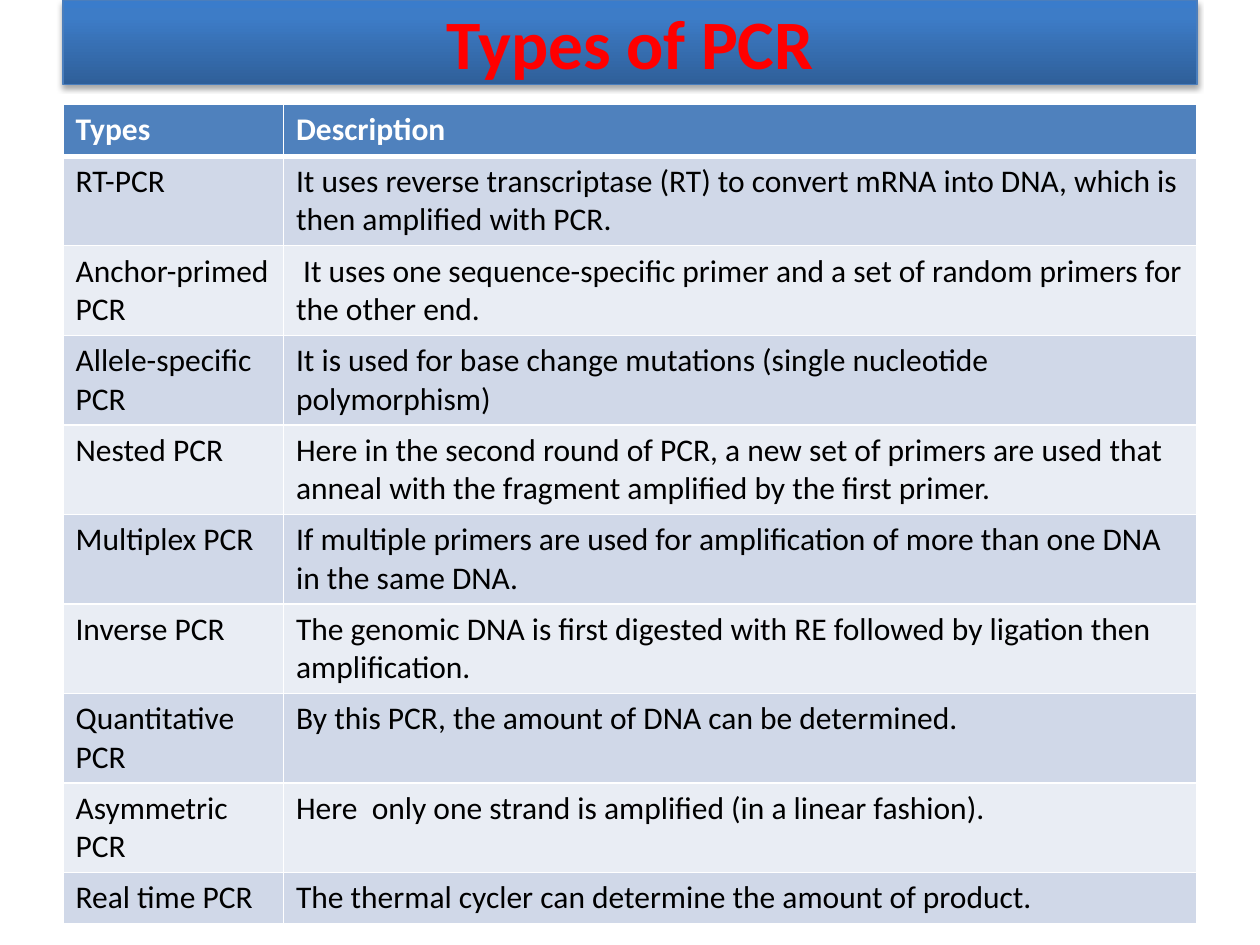
import copy

import lxml.etree
import pptx
import pptx.dml.color
import pptx.enum.text
import pptx.oxml
import pptx.oxml.ns
import pptx.util

COLORS = {
    "title": "FF0000", "title_line": "4B7EBC", "shadow": "000000",
    "header": "4F81BD", "header_text": "FFFFFF", "text": "000000",
    "odd_row": "D0D8E8", "even_row": "E9EDF4", "border": "FFFFFF",
}
TITLE_GRADIENT = [(0, "2F5F99"), (0.8, "3D7CC7"), (1, "3A7CCB")]
FONT = "Calibri"
SLIDE_WIDTH, SLIDE_HEIGHT = 10, 7.5
MARGIN = 0.05 * SLIDE_WIDTH
CONTENT_WIDTH = SLIDE_WIDTH - 2 * MARGIN
TITLE_BOX = (MARGIN, 0, CONTENT_WIDTH, 0.67)
TABLE_BOX = (MARGIN, 0.83, CONTENT_WIDTH, 4.1)
COLUMN_WIDTHS = (1.75, 7.25)

ROWS = [
    ("Types", "Description"),
    ("RT-PCR", "It uses reverse transcriptase (RT) to convert mRNA into DNA, "
     "which is then amplified with PCR."),
    ("Anchor-primed PCR", " It uses one sequence-specific primer and a set of "
     "random primers for the other end."),
    ("Allele-specific PCR", "It is used for base change mutations (single "
     "nucleotide polymorphism)"),
    ("Nested PCR", "Here in the second round of PCR, a new set of primers are "
     "used that anneal with the fragment amplified by the first primer."),
    ("Multiplex PCR", "If multiple primers are used for amplification of more "
     "than one DNA in the same DNA."),
    ("Inverse PCR", "The genomic DNA is first digested with RE followed by "
     "ligation then amplification."),
    ("Quantitative PCR", "By this PCR, the amount of DNA can be determined."),
    ("Asymmetric PCR", "Here  only one strand is amplified (in a linear fashion)."),
    ("Real time PCR", "The thermal cycler can determine the amount of product."),
]


def rgb(name):
    return pptx.dml.color.RGBColor.from_string(COLORS[name])


def inches(box):
    return [pptx.util.Inches(length) for length in box]


def format_text(paragraph, size, color, bold):
    font = paragraph.runs[0].font
    values = {"name": FONT, "size": pptx.util.Pt(size), "bold": bold}
    for name, value in values.items():
        setattr(font, name, value)
    font.color.rgb = rgb(color)


def fill_gradient(shape, stops):
    """Fill from bottom to top with any number of stops."""
    shape.fill.gradient()
    shape.fill.gradient_angle = 90
    stop_list = shape._element.spPr.find(".//" + pptx.oxml.ns.qn("a:gsLst"))
    while len(stop_list) < len(stops):
        stop_list.append(copy.deepcopy(stop_list[-1]))
    for stop, (position, color) in zip(shape.fill.gradient_stops, stops):
        stop.position = position
        stop.color.rgb = pptx.dml.color.RGBColor.from_string(color)


def add_shadow(shape):
    shape.shadow.inherit = False
    effects = shape._element.spPr.find(pptx.oxml.ns.qn("a:effectLst"))
    effects.append(pptx.oxml.parse_xml(
        f'<a:outerShdw {pptx.oxml.ns.nsdecls("a")} blurRad="{pptx.util.Pt(3.1)}" '
        f'dist="{pptx.util.Pt(1.8)}" dir="5400000" rotWithShape="0">'
        f'<a:srgbClr val="{COLORS["shadow"]}"><a:alpha val="35000"/></a:srgbClr>'
        '</a:outerShdw>'))


def place_title(slide, box):
    title = slide.shapes.title
    title.left, title.top, title.width, title.height = inches(box)
    fill_gradient(title, TITLE_GRADIENT)
    title.line.color.rgb = rgb("title_line")
    title.line.width = pptx.util.Pt(0.75)
    add_shadow(title)
    frame = title.text_frame
    frame.text = "Types of PCR"
    frame.auto_size = pptx.enum.text.MSO_AUTO_SIZE.NONE
    frame.vertical_anchor = pptx.enum.text.MSO_ANCHOR.MIDDLE
    frame.paragraphs[0].alignment = pptx.enum.text.PP_ALIGN.CENTER
    format_text(frame.paragraphs[0], 39.6, "title", True)


def add_borders(cell, widths):
    properties = cell._tc.get_or_add_tcPr()
    for index, (side, width) in enumerate(widths.items()):
        properties.insert(index, pptx.oxml.parse_xml(
            f'<a:ln{side} {pptx.oxml.ns.nsdecls("a")} w="{pptx.util.Pt(width)}">'
            f'<a:solidFill><a:srgbClr val="{COLORS["border"]}"/></a:solidFill>'
            f'</a:ln{side}>'))


def place_types_table(slide, box):
    table = slide.shapes.add_table(len(ROWS), len(COLUMN_WIDTHS), *inches(box)).table
    for column, width in zip(table.columns, COLUMN_WIDTHS):
        column.width = pptx.util.Inches(width)
    for row_index, texts in enumerate(ROWS):
        header = row_index == 0
        fill = "header" if header else "odd_row" if row_index % 2 else "even_row"
        widths = {"L": 1, "R": 1, "T": 3 if row_index == 1 else 1,
                  "B": 3 if header else 1}
        for cell, text in zip(table.rows[row_index].cells, texts):
            cell.text = text
            cell.fill.solid()
            cell.fill.fore_color.rgb = rgb(fill)
            add_borders(cell, widths)
            format_text(cell.text_frame.paragraphs[0], 18,
                        "header_text" if header else "text", header)


def main():
    presentation = pptx.Presentation()
    presentation.slide_width = pptx.util.Inches(SLIDE_WIDTH)
    presentation.slide_height = pptx.util.Inches(SLIDE_HEIGHT)
    title_only = presentation.slide_layouts.get_by_name("Title Only")
    slide = presentation.slides.add_slide(title_only)
    place_title(slide, TITLE_BOX)
    place_types_table(slide, TABLE_BOX)
    presentation.save("out.pptx")


if __name__ == "__main__":
    main()
